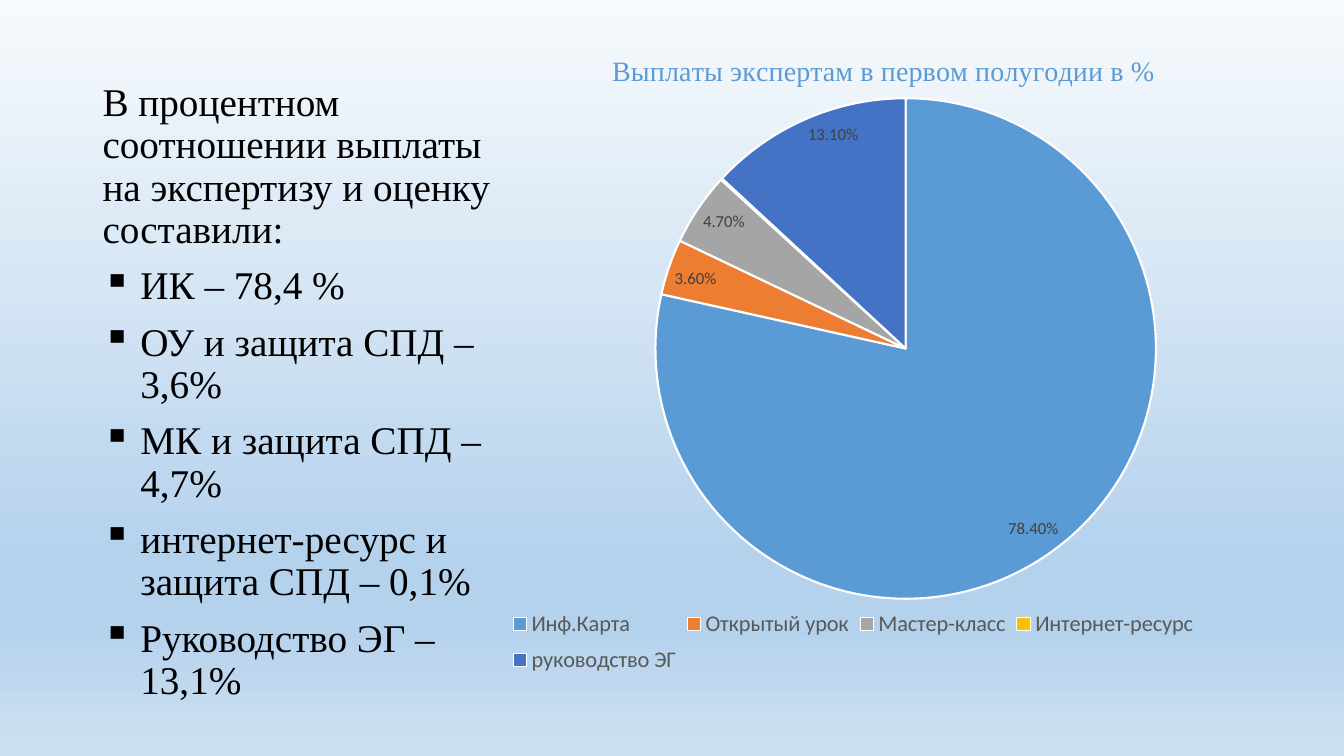
"""Build a slide with expert payment shares as a bulleted list and a pie chart."""
from lxml import etree
from pptx import Presentation
from pptx.chart.data import CategoryChartData
from pptx.dml.color import RGBColor
from pptx.enum.chart import XL_CHART_TYPE, XL_LABEL_POSITION, XL_LEGEND_POSITION
from pptx.oxml.ns import qn
from pptx.util import Pt

PIE = XL_CHART_TYPE.PIE
LEGEND_BOTTOM = XL_LEGEND_POSITION.BOTTOM
INSIDE_END = XL_LABEL_POSITION.INSIDE_END

SERIF, SANS = "Times New Roman", "Calibri"
COLORS = {
    "text": "000000", "title": "5B9BD5", "legend": "595959", "label": "404040",
    "border": "FFFFFF",
}
BACKGROUND_STOPS = [(0, "F7FAFD"), (74, "B5D2EC"), (83, "B5D2EC"), (100, "CEE1F2")]
PAYMENTS = [
    ("Инф.Карта", 0.784, "5B9BD5"),
    ("Открытый урок", 0.036, "ED7D31"),
    ("Мастер-класс", 0.047, "A5A5A5"),
    ("Интернет-ресурс", 0.001, "FFC000"),
    ("руководство ЭГ", 0.131, "4472C4"),
]
UNLABELLED = 3
CHART_TITLE = "Выплаты экспертам в первом полугодии в %"
INTRO = "В процентном соотношении выплаты на экспертизу и оценку составили:"
SHARES = [
    "ИК – 78,4 %",
    "ОУ и защита СПД – 3,6%",
    "МК и защита СПД – 4,7%",
    "интернет-ресурс и защита СПД – 0,1%",
    "Руководство ЭГ – 13,1%",
]


def style_font(font, size, color, name):
    """Set size, colour and typeface of a font."""
    font.size = Pt(size)
    font.name = name
    font.bold = False
    font.color.rgb = RGBColor.from_string(COLORS[color])


def paint_background(slide, stops):
    """Fill the slide background with a vertical gradient."""
    fill = slide.background.fill
    fill.gradient()
    gradient = slide.background._cSld.find(".//" + qn("a:gradFill"))
    stop_list = gradient.find(qn("a:gsLst"))
    for old_stop in list(stop_list):
        stop_list.remove(old_stop)
    for position, color in stops:
        stop = etree.SubElement(stop_list, qn("a:gs"), pos=str(position * 1000))
        etree.SubElement(stop, qn("a:srgbClr"), val=color)
    gradient.find(qn("a:lin")).set("ang", "5400000")


def add_bullet(paragraph):
    """Give a paragraph a square bullet with a hanging indent."""
    properties = paragraph._p.get_or_add_pPr()
    properties.set("marL", str(Pt(27)))
    properties.set("indent", str(-Pt(27)))
    etree.SubElement(properties, qn("a:buChar"), char="▪")


def add_share_list(slide, left, top, width, height):
    """Add the introduction and the bulleted shares."""
    frame = slide.shapes.add_textbox(left, top, width, height).text_frame
    frame.word_wrap = True
    for index, line in enumerate([INTRO, *SHARES]):
        paragraph = frame.add_paragraph() if index else frame.paragraphs[0]
        paragraph.text = line
        paragraph.line_spacing = 0.9
        paragraph.space_before = Pt(10)
        if index:
            add_bullet(paragraph)
        style_font(paragraph.font, 28, "text", SERIF)


def place_part(part, index, **fractions):
    """Place a chart part by fractions of the chart area."""
    for old_layout in part.findall(qn("c:layout")):
        part.remove(old_layout)
    layout = etree.Element(qn("c:layout"))
    manual = etree.SubElement(layout, qn("c:manualLayout"))
    if "plotArea" in part.tag:
        etree.SubElement(manual, qn("c:layoutTarget"), val="inner")
    for axis in "xy":
        etree.SubElement(manual, qn(f"c:{axis}Mode"), val="edge")
    for key, fraction in fractions.items():
        etree.SubElement(manual, qn(f"c:{key}"), val=str(fraction))
    part.insert(index, layout)


def label_slices(series):
    """Show percentages inside all slices but the tiny one."""
    labels = series.data_labels
    labels.show_value = True
    labels.number_format = "0.00%"
    labels.number_format_is_linked = False
    labels.position = INSIDE_END
    style_font(labels.font, 12, "label", SANS)
    hidden = etree.Element(qn("c:dLbl"))
    etree.SubElement(hidden, qn("c:idx"), val=str(UNLABELLED))
    etree.SubElement(hidden, qn("c:delete"), val="1")
    labels._element.insert(0, hidden)


def add_payment_pie(slide, left, top, width, height):
    """Add the pie chart of payments with title and legend."""
    data = CategoryChartData(number_format="0.00%")
    data.categories = [name for name, _, _ in PAYMENTS]
    data.add_series("Series 1", [share for _, share, _ in PAYMENTS])
    chart = slide.shapes.add_chart(PIE, left, top, width, height, data).chart
    style_font(chart.font, 10, "text", SANS)

    chart.has_title = True
    heading = chart.chart_title.text_frame.paragraphs[0]
    heading.text = CHART_TITLE
    style_font(heading.font, 20, "title", SERIF)
    chart.chart_title.include_in_layout = False
    place_part(chart.chart_title._element, 1, x=0.16, y=0.03)

    chart.has_legend = True
    chart.legend.position = LEGEND_BOTTOM
    chart.legend.include_in_layout = False
    style_font(chart.legend.font, 16, "legend", SANS)
    place_part(chart.legend._element, 1, x=0.03, y=0.86, w=0.87, h=0.12)

    plot = chart.plots[0]
    plot.vary_by_categories = True
    place_part(plot._element.getparent(), 0, x=0.22, y=0.1, w=0.62, h=0.76)
    series = plot.series[0]
    for index, (_, _, color) in enumerate(PAYMENTS):
        slice_format = series.points[index].format
        slice_format.fill.solid()
        slice_format.fill.fore_color.rgb = RGBColor.from_string(color)
        slice_format.line.width = Pt(1.5)
        slice_format.line.color.rgb = RGBColor.from_string(COLORS["border"])
    label_slices(series)


def main():
    """Build and save the slide."""
    presentation = Presentation()
    presentation.slide_width, presentation.slide_height = Pt(960), Pt(540)
    slide = presentation.slides.add_slide(presentation.slide_layouts[6])
    paint_background(slide, BACKGROUND_STOPS)
    add_payment_pie(slide, Pt(341.3), Pt(20.2), Pt(576.7), Pt(476.6))
    add_share_list(slide, Pt(66.2), Pt(55.4), Pt(309.6), Pt(406.8))
    presentation.save("out.pptx")


if __name__ == "__main__":
    main()
